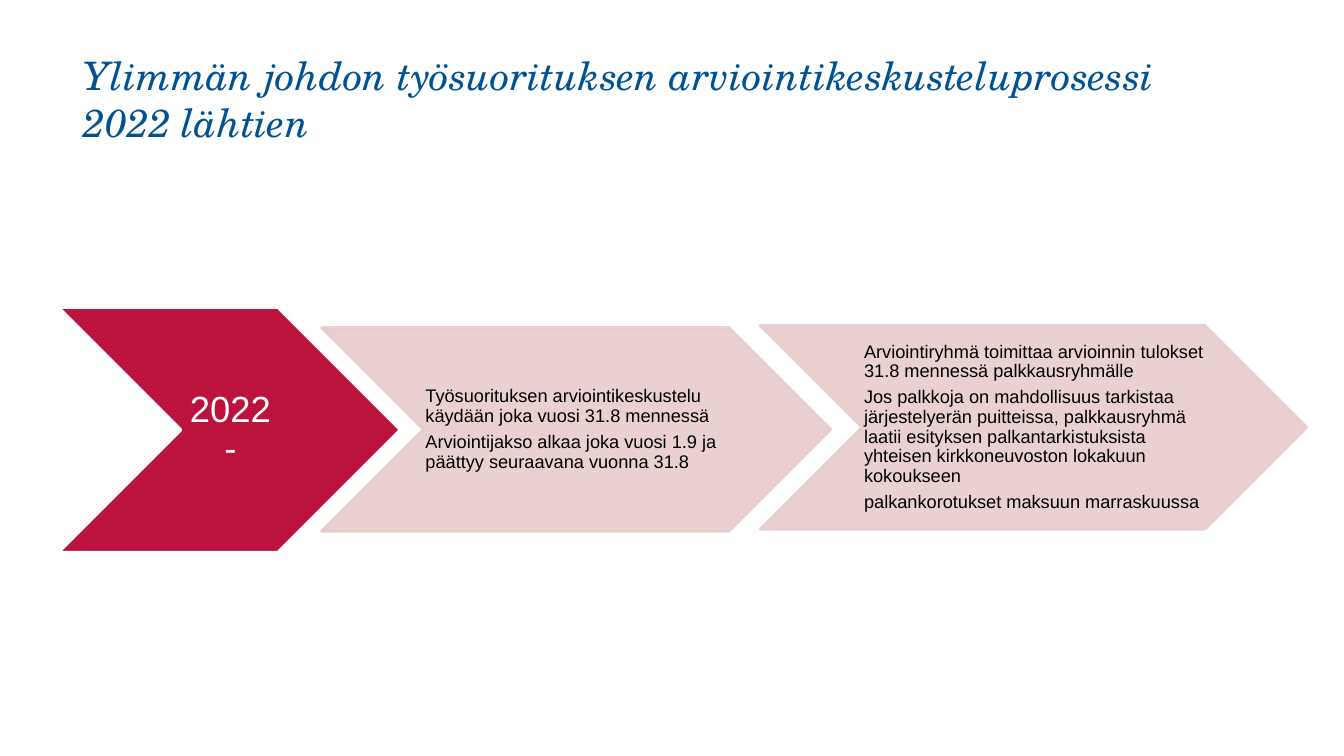
from dataclasses import dataclass

from lxml.etree import SubElement
from pptx import Presentation
from pptx.dml.color import RGBColor
from pptx.dml.fill import FillFormat
from pptx.enum.shapes import MSO_SHAPE as Preset
from pptx.enum.text import MSO_ANCHOR as Anchor, MSO_AUTO_SIZE as AutoSize, PP_ALIGN as Align
from pptx.oxml.ns import qn
from pptx.slide import Slide
from pptx.util import Inches, Pt

COLORS = {
    "title": "005293",
    "year": "BB133E",
    "step": "E7CCCE",
    "white": "FFFFFF",
    "black": "000000",
}


@dataclass
class Chevron:
    left: float
    top: float
    width: float
    height: float
    paragraphs: list[str]
    fill: str = "step"
    line: str = "step"
    text: str = "black"
    size: float = 13
    opacity: int = 90
    align: Align = Align.LEFT
    insets: tuple[float, float, float, float] = (0.02, 0.01, 0, 0.01)


CHEVRONS = [
    Chevron(0.58, 3.05, 3.39, 2.43, ["2022-"], "year", "white", "white", 26, 100,
            Align.CENTER, (0.04, 0.02, 0.02, 0.02)),
    Chevron(3.19, 3.25, 5.05, 2.02, [
        "Työsuorituksen arviointikeskustelu käydään joka vuosi 31.8 mennessä",
        "Arviointijakso alkaa joka vuosi 1.9 ja päättyy seuraavana vuonna 31.8",
    ]),
    Chevron(7.54, 3.23, 5.42, 2.02, [
        "Arviointiryhmä toimittaa arvioinnin tulokset 31.8 mennessä palkkausryhmälle",
        "Jos palkkoja on mahdollisuus tarkistaa järjestelyerän puitteissa, palkkausryhmä "
        "laatii esityksen palkantarkistuksista yhteisen kirkkoneuvoston lokakuun kokoukseen",
        "palkankorotukset maksuun marraskuussa",
    ]),
]


def color(name: str) -> RGBColor:
    return RGBColor.from_string(COLORS[name])


def paint(fill: FillFormat, name: str) -> None:
    fill.solid()
    fill.fore_color.rgb = color(name)


def add_title(slide: Slide, text: str) -> None:
    title = slide.shapes.title
    title.left, title.top = Inches(0.73), Inches(0.46)
    title.width, title.height = Inches(11.5), Inches(1.03)
    frame = title.text_frame
    frame.text = text
    frame.word_wrap = True
    frame.auto_size = AutoSize.NONE
    frame.vertical_anchor = Anchor.TOP
    paragraph = frame.paragraphs[0]
    paragraph.alignment = Align.LEFT
    font = paragraph.runs[0].font
    font.name, font.size, font.italic = "TeX Gyre Schola", Pt(28), True
    font.color.rgb = color("title")


def add_chevron(slide: Slide, chevron: Chevron) -> None:
    shape = slide.shapes.add_shape(
        Preset.CHEVRON, Inches(chevron.left), Inches(chevron.top),
        Inches(chevron.width), Inches(chevron.height))
    shape.shadow.inherit = False
    paint(shape.fill, chevron.fill)
    paint(shape.line.fill, chevron.line)
    shape.line.width = Pt(2)
    if chevron.opacity < 100:
        for element in shape.element.spPr.iter(qn("a:srgbClr")):
            SubElement(element, qn("a:alpha"), val=str(chevron.opacity * 1000))

    frame = shape.text_frame
    frame.word_wrap = True
    frame.vertical_anchor = Anchor.MIDDLE
    (frame.margin_left, frame.margin_top,
     frame.margin_right, frame.margin_bottom) = map(Inches, chevron.insets)
    frame.text = "\n".join(chevron.paragraphs)
    for paragraph in frame.paragraphs:
        paragraph.alignment = chevron.align
        paragraph.line_spacing = 0.9
        paragraph.space_after = Pt(chevron.size * 0.35)
        font = paragraph.runs[0].font
        font.name, font.size = "Arial", Pt(chevron.size)
        font.color.rgb = color(chevron.text)


def main() -> None:
    presentation = Presentation()
    presentation.slide_width, presentation.slide_height = Inches(13.33), Inches(7.5)
    title_only = presentation.slide_layouts[5]
    slide = presentation.slides.add_slide(title_only)
    add_title(slide, "Ylimmän johdon työsuorituksen arviointikeskusteluprosessi 2022 lähtien")
    for chevron in CHEVRONS:
        add_chevron(slide, chevron)
    presentation.save("out.pptx")


if __name__ == "__main__":
    main()
